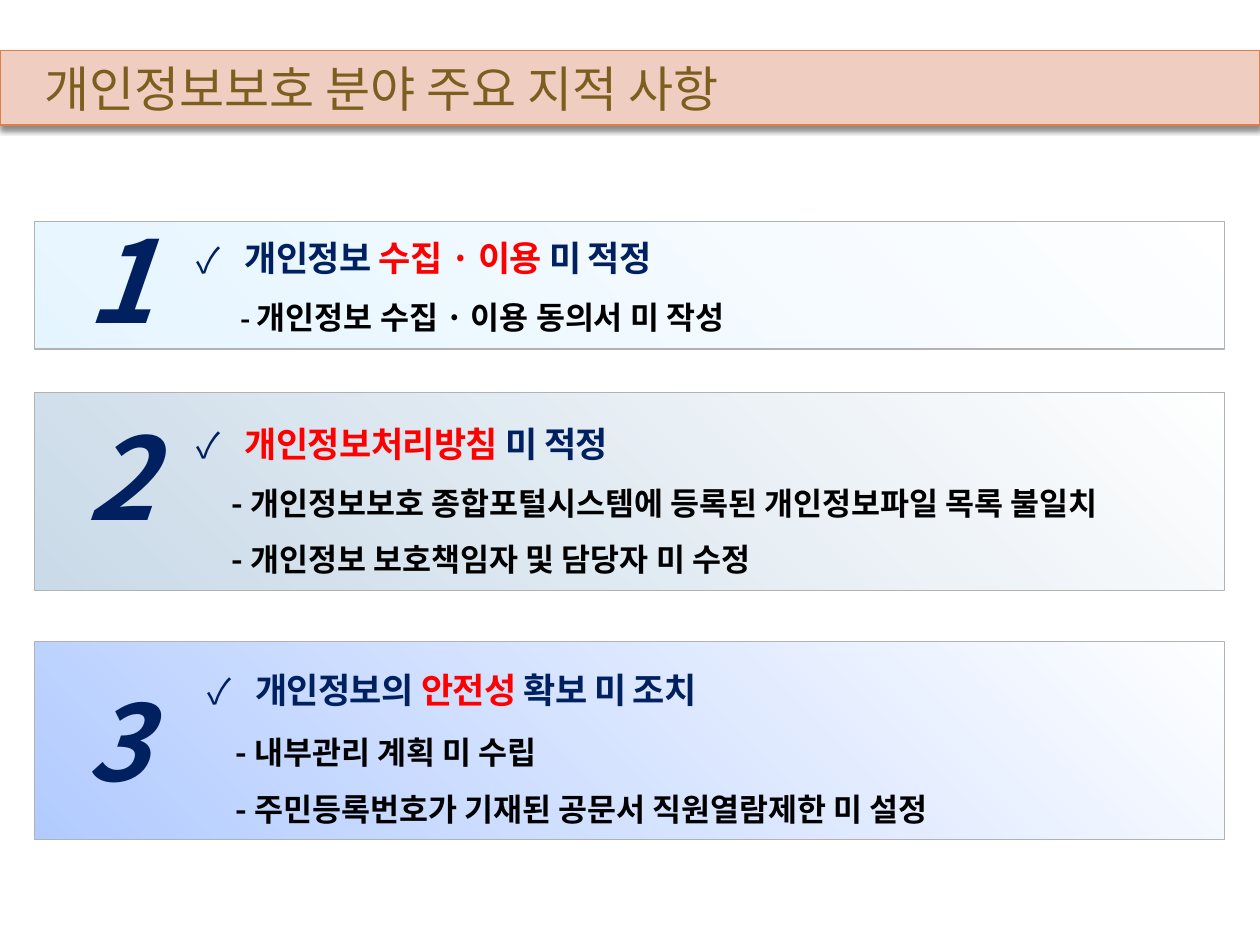
from lxml import etree
from pptx import Presentation
from pptx.dml.color import RGBColor
from pptx.enum.shapes import MSO_SHAPE
from pptx.enum.text import MSO_ANCHOR, MSO_AUTO_SIZE as FIT, PP_ALIGN
from pptx.oxml import parse_xml
from pptx.oxml.ns import nsdecls, qn
from pptx.util import Cm, Pt

FONT = "Noto Sans CJK KR"
NAVY, RED, BLACK = "002060", "FF0000", "000000"
PANEL_LEFT, PANEL_WIDTH = 0.69, 24

# Each panel: box, colour, number and list placement relative to the box, text
PANELS = [
    dict(top=4.47, height=2.57, color="CCECFF",
         number=dict(text="1", dy=-0.36, size=65),
         body=dict(dx=3.02, dy=0.18, width=12.85, height=2.26),
         heading=[("개인정보 ", NAVY), ("수집 · 이용 ", RED), ("미 적정", NAVY)],
         heading_spacing=1, sub_indent=0.88, sub_gap=0, dash_size=16,
         subs=["개인정보 수집 · 이용 동의서 미 작성"]),
    dict(top=7.92, height=3.99, color="94B6D2",
         number=dict(text="2", dy=0.15, size=65),
         body=dict(dx=3.02, dy=0.05, width=21.13, height=3.84),
         heading=[("개인정보처리방침 ", RED), ("미 적정", NAVY)],
         heading_spacing=1.5, sub_indent=0.71, sub_gap=0, dash_size=18,
         subs=["개인정보보호 종합포털시스템에 등록된 개인정보파일 목록 불일치",
               "개인정보 보호책임자 및 담당자 미 수정"]),
    dict(top=12.93, height=3.99, color="6699FF",
         number=dict(text="3", dy=0.58, size=60),
         body=dict(dx=3.23, dy=0, width=17.15, height=3.99),
         heading=[("개인정보의 ", NAVY), ("안전성", RED), (" 확보 미 조치", NAVY)],
         heading_spacing=1.5, sub_indent=0.58, sub_gap=2, dash_size=18,
         subs=["내부관리 계획 미 수립",
               "주민등록번호가 기재된 공문서 직원열람제한 미 설정"]),
]


def rgb(value):
    return RGBColor.from_string(value)


def place(sp, left, top, width, height):
    sp.left, sp.top, sp.width, sp.height = map(Cm, (left, top, width, height))


def add_run(p, text, color, spacing=0, **formats):
    r = p.add_run()
    r.text = text
    for name, value in dict(name=FONT, **formats).items():
        setattr(r.font, name, value)
    r.font.color.rgb = rgb(color)
    rPr = r.font._element
    etree.SubElement(rPr, qn("a:ea")).set("typeface", FONT)
    if spacing:
        rPr.set("spc", str(round(spacing * 100)))
    return r


def shadow_effect(color, alpha, blur, dist, angle):
    return parse_xml(
        f'<a:effectLst {nsdecls("a")}><a:outerShdw blurRad="{Pt(blur)}" '
        f'dist="{Pt(dist)}" dir="{angle * 60000}" algn="ctr" rotWithShape="0">'
        f'<a:srgbClr val="{color}"><a:alpha val="{alpha * 1000}"/></a:srgbClr>'
        '</a:outerShdw></a:effectLst>')


def gradient(color, alpha=49, angle=315):
    stops = "".join(
        f'<a:gs pos="{pos}"><a:srgbClr val="{c}"><a:alpha val="{alpha * 1000}"/>'
        '</a:srgbClr></a:gs>' for pos, c in ((0, color), (100000, "FFFFFF")))
    return parse_xml(
        f'<a:gradFill {nsdecls("a")} rotWithShape="1"><a:gsLst>{stops}</a:gsLst>'
        f'<a:lin ang="{angle * 60000}" scaled="1"/></a:gradFill>')


def format_paragraph(p, margin, indent, spacing, before, bullet=None):
    p.alignment = PP_ALIGN.LEFT
    p.line_spacing, p.space_before, p.space_after = spacing, Pt(before), Pt(0)
    pPr = p._p.get_or_add_pPr()
    pPr.set("marL", str(Cm(margin)))
    pPr.set("indent", str(Cm(indent)))
    if bullet:
        color = etree.SubElement(pPr, qn("a:buClr"))
        etree.SubElement(color, qn("a:srgbClr")).set("val", NAVY)
        etree.SubElement(pPr, qn("a:buFont")).set("typeface", FONT)
        etree.SubElement(pPr, qn("a:buChar")).set("char", bullet)
    else:
        etree.SubElement(pPr, qn("a:buNone"))


def build_title(sp, left, top, width, height):
    place(sp, left, top, width, height)
    sp.fill.solid()
    sp.fill.fore_color.rgb = rgb("EFCDC1")
    sp.line.color.rgb = rgb("DD8047")
    sp.line.width = Pt(0.79)
    sp._element.spPr.append(shadow_effect(BLACK, 45, 3, 2.4, 90))
    tf = sp.text_frame
    for name, value in dict(auto_size=FIT.NONE, word_wrap=True, margin_left=Cm(0.9),
                            vertical_anchor=MSO_ANCHOR.MIDDLE).items():
        setattr(tf, name, value)
    p = tf.paragraphs[0]
    p.alignment = PP_ALIGN.LEFT
    add_run(p, "개인정보보호 분야 주요 지적 사항", "7C5F1E", size=Pt(28))


def build_number(slide, left, top, text, size):
    sp = slide.shapes.add_textbox(Cm(left), Cm(top), Cm(2.31), Cm(size * 0.046))
    tf = sp.text_frame
    tf.word_wrap, tf.auto_size = True, FIT.SHAPE_TO_FIT_TEXT
    r = add_run(tf.paragraphs[0], text, NAVY, size=Pt(size), bold=True, italic=True)
    fill = r.font._element.find(qn("a:solidFill"))
    fill.addnext(shadow_effect(BLACK, 50, 0, 3, 45))


def build_list(sp, panel):
    tf = sp.text_frame
    for name, value in dict(word_wrap=True, auto_size=FIT.SHAPE_TO_FIT_TEXT,
                            vertical_anchor=MSO_ANCHOR.TOP).items():
        setattr(tf, name, value)
    p = tf.paragraphs[0]
    format_paragraph(p, 0.97, -0.97, panel["heading_spacing"], 0, "✓")
    for text, color in panel["heading"]:
        add_run(p, text, color, spacing=-0.4, size=Pt(20), bold=True)
    for i, text in enumerate(panel["subs"]):
        p = tf.add_paragraph()
        format_paragraph(p, panel["sub_indent"], 0, 1.5, 0 if i else panel["sub_gap"])
        add_run(p, "- ", BLACK, size=Pt(panel["dash_size"]), bold=True)
        add_run(p, text, BLACK, size=Pt(18), bold=True)


def build_panel(slide, body, left, top, width, panel):
    # Gradient box
    box = slide.shapes.add_shape(MSO_SHAPE.RECTANGLE, Cm(left), Cm(top),
                                 Cm(width), Cm(panel["height"]))
    box.shadow.inherit = False
    box.line.color.rgb = rgb("B2B2B2")
    box.line.width = Pt(0.75)
    box._element.spPr.find(qn("a:prstGeom")).addnext(gradient(panel["color"]))
    # Large number
    number = panel["number"]
    build_number(slide, left + 0.81, top + number["dy"], number["text"], number["size"])
    # List, brought in front of the box
    at = panel["body"]
    place(body, left + at["dx"], top + at["dy"], at["width"], at["height"])
    build_list(body, panel)
    slide.shapes._spTree.append(body._element)


def main():
    prs = Presentation()
    prs.slide_width, prs.slide_height = Cm(25.4), Cm(19.05)
    slide = prs.slides.add_slide(prs.slide_layouts.get_by_name("Comparison"))
    title, *bodies = slide.placeholders
    build_title(title, 0, 1.02, 25.4, 1.5)
    for body, panel in zip(bodies, PANELS):
        build_panel(slide, body, PANEL_LEFT, panel["top"], PANEL_WIDTH, panel)
    # Remove the placeholders left empty
    for sp in bodies[len(PANELS):]:
        sp._element.getparent().remove(sp._element)
    prs.save("out.pptx")


if __name__ == "__main__":
    main()
